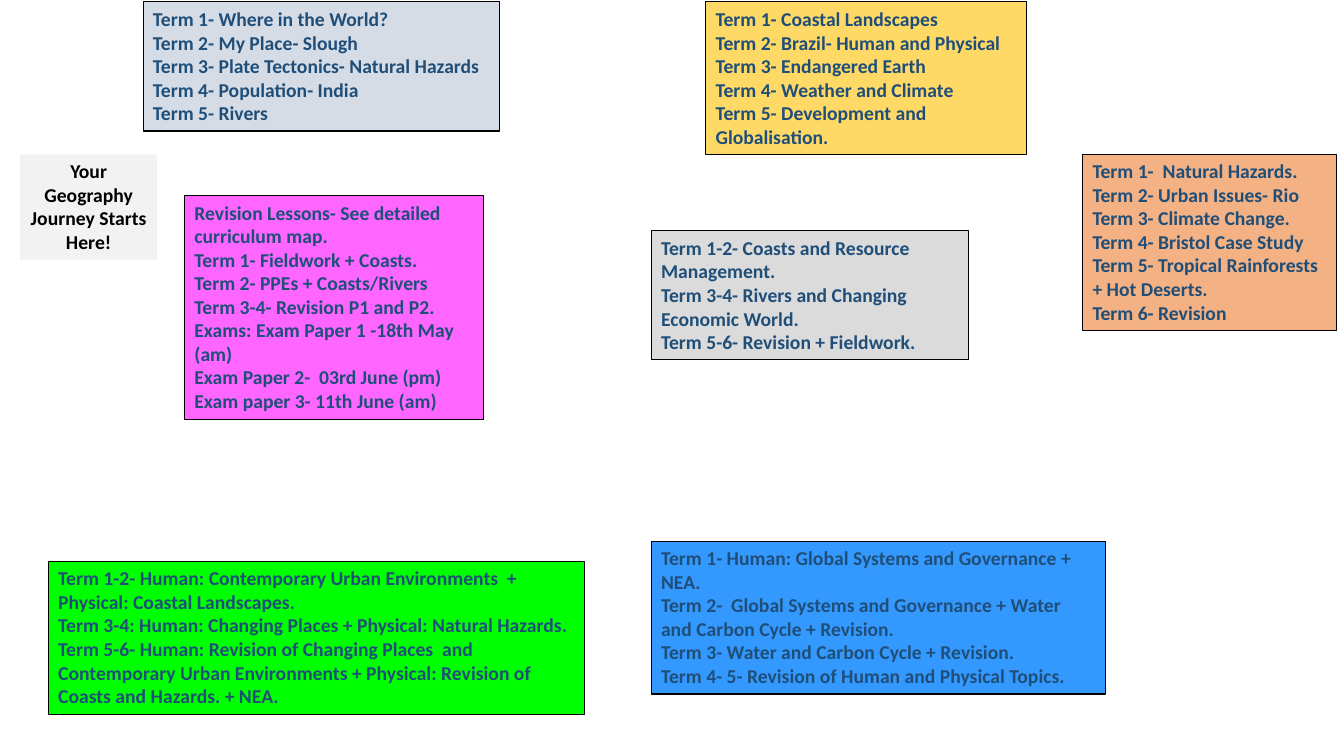
"""Build a one-page geography curriculum journey from coloured term boxes."""
from pptx import Presentation
from pptx import util as u
from pptx.dml.color import RGBColor
from pptx.enum import text

THEME = {
    "font": "Calibri", "size": 14, "line_height": 17, "padding": 7.2,
    "border": "000000", "border_width": 0.75,
    "terms": "1F4E79", "start": "000000",
    "blue_grey": "D6DCE5", "gold": "FFD966", "orange": "F4B183", "grey": "DBDBDB",
    "pink": "FF66FF", "green": "00FF00", "blue": "3399FF", "pale": "F2F2F2",
}

TERM_BOXES = [
    {"fill": "blue_grey", "left": 102.2, "top": 1.4, "width": 254.9, "rows": 5, "lines": [
        "Term 1- Where in the World?",
        "Term 2- My Place- Slough",
        "Term 3- Plate Tectonics- Natural Hazards",
        "Term 4- Population- India",
        "Term 5- Rivers"]},
    {"fill": "gold", "left": 504, "top": 1.4, "width": 229, "rows": 6, "lines": [
        "Term 1- Coastal Landscapes",
        "Term 2- Brazil- Human and Physical",
        "Term 3- Endangered Earth",
        "Term 4- Weather and Climate",
        "Term 5- Development and Globalisation."]},
    {"fill": "orange", "left": 773.3, "top": 110.2, "width": 181.5, "rows": 7, "lines": [
        "Term 1-  Natural Hazards.",
        "Term 2- Urban Issues- Rio",
        "Term 3- Climate Change.",
        "Term 4- Bristol Case Study",
        "Term 5- Tropical Rainforests + Hot Deserts.",
        "Term 6- Revision"]},
    {"fill": "grey", "left": 465.1, "top": 164.9, "width": 226.8, "rows": 5, "lines": [
        "Term 1-2- Coasts and Resource Management.",
        "Term 3-4- Rivers and Changing Economic World.",
        "Term 5-6- Revision + Fieldwork."]},
    {"fill": "pink", "left": 131.8, "top": 139.7, "width": 213.9, "rows": 9, "lines": [
        "Revision Lessons- See detailed curriculum map.",
        "Term 1- Fieldwork + Coasts.",
        "Term 2- PPEs + Coasts/Rivers",
        "Term 3-4- Revision P1 and P2.",
        "Exams: Exam Paper 1 -18th May (am)",
        "Exam Paper 2-  03rd June (pm)",
        "Exam paper 3- 11th June (am)"]},
    {"fill": "green", "left": 34.5, "top": 401, "width": 383, "rows": 6, "lines": [
        "Term 1-2- Human: Contemporary Urban Environments  + Physical: Coastal Landscapes.",
        "Term 3-4: Human: Changing Places + Physical: Natural Hazards.",
        "Term 5-6- Human: Revision of Changing Places  and Contemporary Urban Environments"
        " + Physical: Revision of Coasts and Hazards. + NEA."]},
    {"fill": "blue", "left": 465.1, "top": 386.6, "width": 324.7, "rows": 6, "lines": [
        "Term 1- Human: Global Systems and Governance + NEA.",
        "Term 2-  Global Systems and Governance + Water and Carbon Cycle + Revision.",
        "Term 3- Water and Carbon Cycle + Revision.",
        "Term 4- 5- Revision of Human and Physical Topics."]},
]
START_BOX = {"fill": "pale", "left": 14.4, "top": 110.2, "width": 97.9, "rows": 4,
             "lines": ["Your Geography Journey Starts Here!"]}


def color(name):
    return RGBColor.from_string(THEME[name])


def apply(target, values):
    for name, value in values.items():
        setattr(target, name, value)


def add_box(page, item, ink, align):
    height = item["rows"] * THEME["line_height"] + THEME["padding"]
    box = page.shapes.add_textbox(
        *(u.Pt(length) for length in (item["left"], item["top"], item["width"], height)))
    box.fill.solid()
    box.fill.fore_color.rgb = color(item["fill"])
    frame = box.text_frame
    apply(frame, {"word_wrap": True, "auto_size": text.MSO_AUTO_SIZE.SHAPE_TO_FIT_TEXT})
    for index, line in enumerate(item["lines"]):
        para = frame.add_paragraph() if index else frame.paragraphs[0]
        para.alignment = align
        span = para.add_run()
        span.text = line
        apply(span.font, {"name": THEME["font"], "size": u.Pt(THEME["size"]), "bold": True})
        span.font.color.rgb = color(ink)
    return box


def main():
    deck = Presentation()
    apply(deck, {"slide_width": u.Pt(960), "slide_height": u.Pt(540)})
    page = deck.slides.add_slide(deck.slide_layouts[6])
    for item in TERM_BOXES:
        box = add_box(page, item, "terms", text.PP_ALIGN.LEFT)
        box.line.color.rgb = color("border")
        box.line.width = u.Pt(THEME["border_width"])
    add_box(page, START_BOX, "start", text.PP_ALIGN.CENTER)
    deck.save("out.pptx")


if __name__ == "__main__":
    main()
